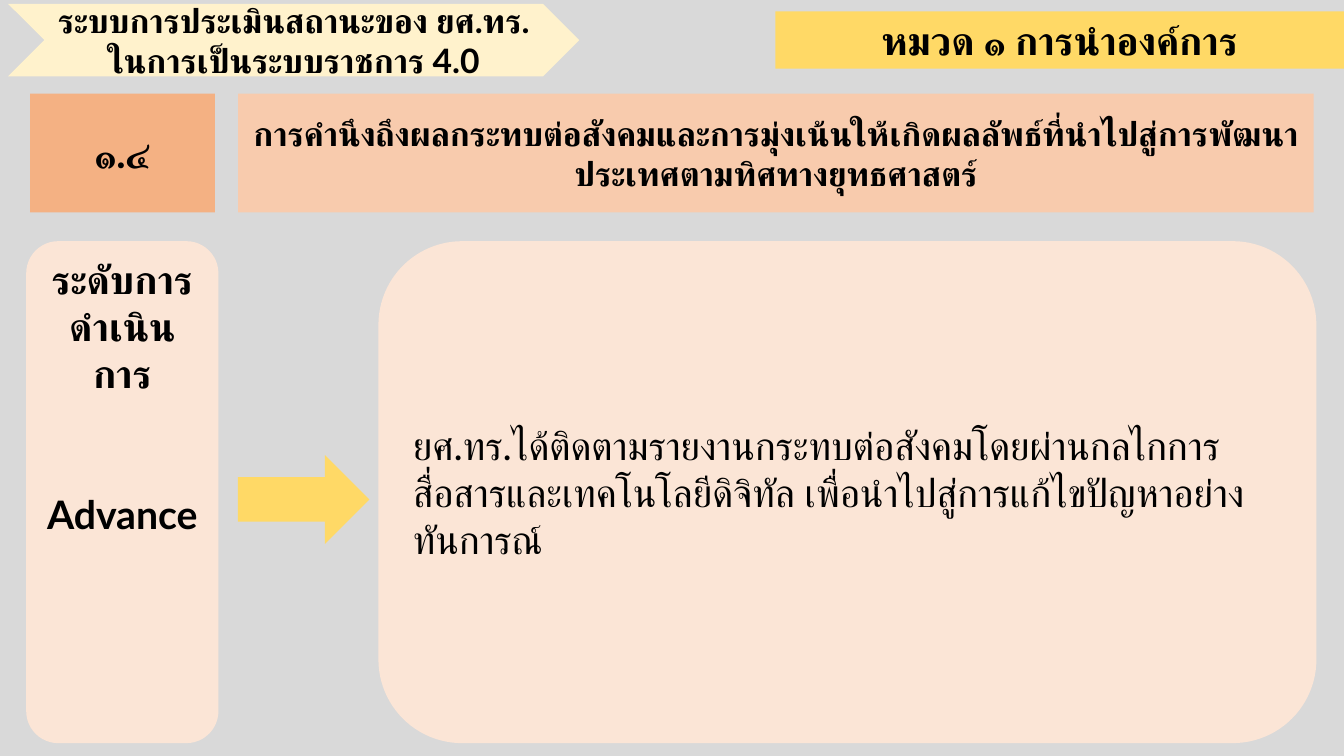
from pptx import Presentation
from pptx import util as u
from pptx.dml.color import RGBColor
from pptx.enum import shapes, text
from pptx.enum.lang import MSO_LANGUAGE_ID
from lxml import etree

WIDE, HIGH = u.Inches(13.33), u.Inches(7.5)
FONT = "Lato"
HUES = {
    "back": "D9D9D9", "ink": "000000", "gold": "FFD966", "cream": "FFF2CC",
    "peach": "FBE5D6", "salmon": "F8CBAD", "orange": "F4B183",
}
NS = "http://schemas.openxmlformats.org/drawingml/2006/main"
KIND = shapes.MSO_SHAPE
MID, TOP = text.MSO_ANCHOR.MIDDLE, text.MSO_ANCHOR.TOP


def paint(fill, hue):
    fill.solid()
    fill.fore_color.rgb = RGBColor.from_string(HUES[hue])


def part(box, x, y, w, h):
    left, top, wide, high = box
    return (left + round(wide * x), top + round(high * y),
            round(wide * w), round(high * h))


def block(slide, kind, box, hue):
    shape = slide.shapes.add_shape(kind, *box)
    shape.shadow.inherit = False
    paint(shape.fill, hue)
    shape.line.fill.background()
    return shape


def write(shape, words, size=28, bold=True, side=text.PP_ALIGN.CENTER, anchor=MID):
    frame = shape.text_frame
    frame.text = words
    frame.word_wrap = True
    frame.auto_size = text.MSO_AUTO_SIZE.NONE
    frame.vertical_anchor = anchor
    for para in frame.paragraphs:
        para.alignment = side
        for run in para.runs:
            font = run.font
            font.name, font.size, font.bold = FONT, u.Pt(size), bold
            font.color.rgb = RGBColor.from_string(HUES["ink"])
            font.language_id = MSO_LANGUAGE_ID.THAI
            etree.SubElement(font._element, f"{{{NS}}}cs", typeface=FONT)
    return frame


def header(slide, box):
    title = slide.shapes.title
    title.left, title.top, title.width, title.height = part(box, 0.577, 0.15, 0.423, 0.75)
    paint(title.fill, "gold")
    write(title, "หมวด ๑ การนำองค์การ")
    banner = block(slide, KIND.CHEVRON, part(box, 0.006, 0.05, 0.425, 0.95), "cream")
    write(banner, "ระบบการประเมินสถานะของ ยศ.ทร.\nในการเป็นระบบราชการ 4.0", 24)


def topic(slide, box):
    number = block(slide, KIND.RECTANGLE, part(box, 0, 0, 0.144, 1), "orange")
    write(number, "๑.๔")
    theme = block(slide, KIND.RECTANGLE, part(box, 0.162, 0, 0.838, 1), "salmon")
    write(theme, "การคำนึงถึงผลกระทบต่อสังคมและการมุ่งเน้นให้เกิดผลลัพธ์ที่นำไปสู่การพัฒนา"
                 "ประเทศตามทิศทางยุทธศาสตร์", 24)


def result(slide, box):
    level = block(slide, KIND.ROUNDED_RECTANGLE, part(box, 0, 0, 0.149, 1), "peach")
    frame = write(level, "ระดับการดำเนินการ\nAdvance", anchor=TOP)
    frame.paragraphs[1].space_before = u.Pt(67)
    block(slide, KIND.RIGHT_ARROW, part(box, 0.164, 0.426, 0.102, 0.177), "gold")
    report = block(slide, KIND.ROUNDED_RECTANGLE, part(box, 0.273, 0, 0.727, 1), "peach")
    write(report, "ยศ.ทร.ได้ติดตามรายงานกระทบต่อสังคมโดยผ่านกลไกการสื่อสารและเทคโนโลยีดิจิทัล "
                  "เพื่อนำไปสู่การแก้ไขปัญหาอย่างทันการณ์",
          bold=False, side=text.PP_ALIGN.LEFT)


def main():
    deck = Presentation()
    deck.slide_width, deck.slide_height = WIDE, HIGH
    slide = deck.slides.add_slide(deck.slide_layouts[5])
    paint(slide.background.fill, "back")
    page = (0, 0, WIDE, HIGH)
    header(slide, part(page, 0, 0, 1, 0.101))
    topic(slide, part(page, 0.0225, 0.124, 0.955, 0.157))
    result(slide, part(page, 0.0195, 0.319, 0.96, 0.664))
    deck.save("out.pptx")


if __name__ == "__main__":
    main()
